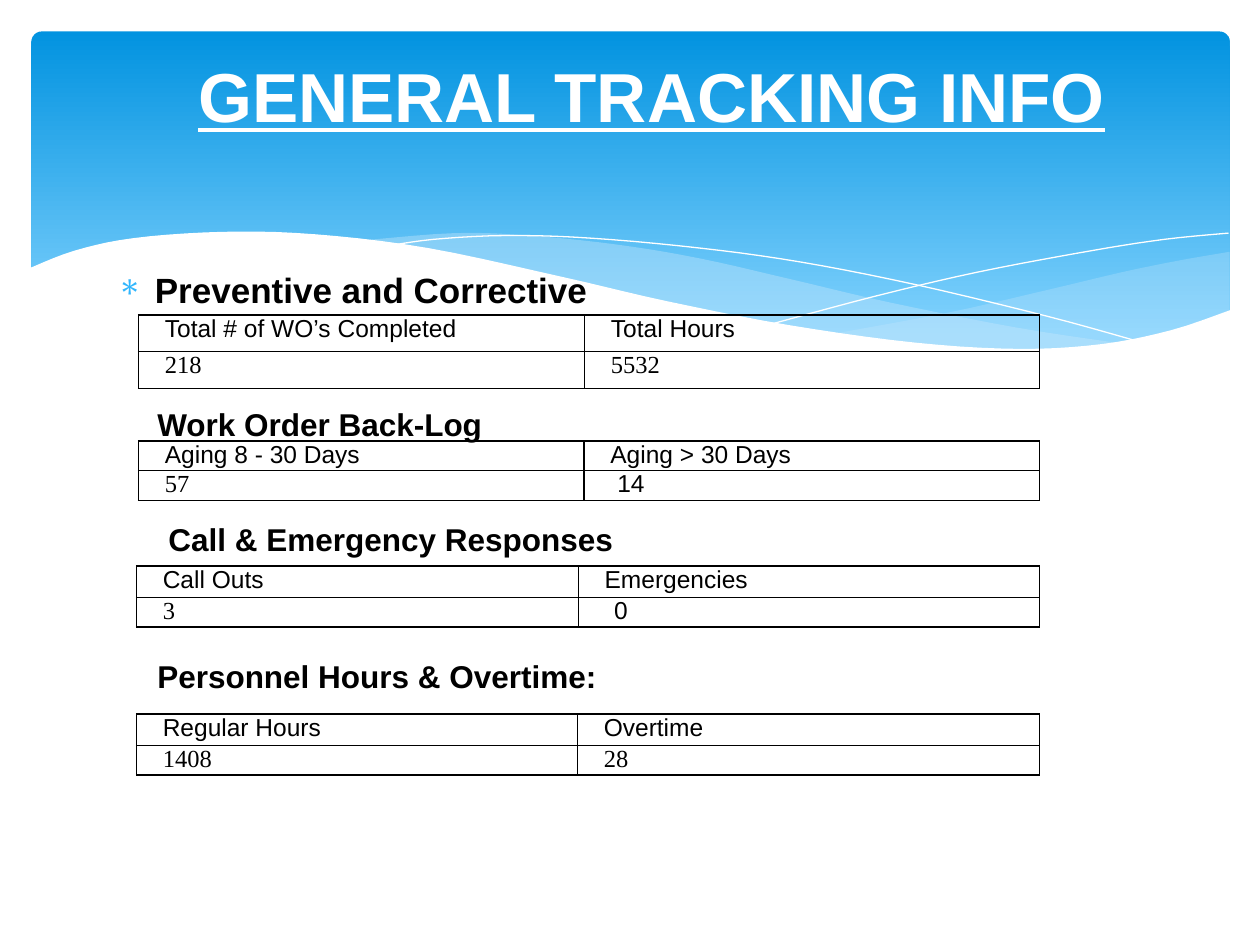
"""Build the general tracking info slide: a wave banner, four headings and four tables."""
import pptx
import pptx.util
import pptx.dml.color
import pptx.enum.shapes
import pptx.enum.text
import pptx.oxml
import pptx.oxml.ns
from lxml import etree

Pt = pptx.util.Pt
qn = pptx.oxml.ns.qn

COLORS = {"deep": "0293E0", "sky": "83D3FE", "mist": "C6E7FC",
          "white": "FFFFFF", "black": "000000", "bullet": "31B6FD"}
SANS, SERIF = "Arial", "Times New Roman"
TITLE = ("GENERAL TRACKING INFO", (36, 26.6, 648, 98.6))

WAVES = [
    {"fill": "mist", "alpha": 29, "curves": [
        [(702, 144), (673.2, 149), (641.5, 155.5), (599, 165.6), (542.2, 178.6), (475.9, 190.8)],
        [(475.9, 190.8), (497.5, 193.7), (536.4, 198), (578.2, 200), (614.9, 198.7),
         (645.8, 194.4), (673.2, 188.6), (702.7, 177.8)],
        [(702.7, 177.8), (702.7, 144)]]},
    {"fill": "mist", "alpha": 40, "curves": [
        [(643, 196.6), (581, 187.2), (508.3, 172.8), (452.9, 159.8), (399.6, 147.6),
         (352.1, 139.7), (302.4, 134.6), (259.9, 133.2), (205.9, 137.5)],
        [(205.9, 137.5), (246.2, 143.3), (290.9, 151.9), (353.5, 167), (420.5, 181.4),
         (478.8, 191.5), (529.9, 198), (573.1, 200.2), (610.6, 199.4), (643, 196.6)]]},
    {"line": "white", "curves": [
        [(222.5, 140.4), (247.7, 136.8), (288.7, 134.6), (337.7, 136.1), (400.3, 141.8),
         (457.9, 149.8), (523.4, 162.7), (598.3, 180.7), (653, 195.8)]]},
    {"line": "white", "curves": [
        [(441.4, 185), (500.4, 169.2), (558.7, 155.5), (623.5, 143.3), (665.3, 136.8),
         (702, 133.2)]]},
    {"fill": "white", "alpha": 100, "curves": [
        [(703.4, 177.1), (669.6, 188.6), (630, 196.6), (582.5, 199.4), (522.7, 195.8),
         (450.7, 185.8), (380.9, 172.1), (321.8, 158.4), (244.8, 141.8), (180, 133.9),
         (127.4, 132.5), (76.3, 136.1), (42.5, 143.3), (16.6, 153.4)],
        [(16.6, 153.4), (16.6, 236.9)], [(16.6, 236.9), (703.4, 236.9)]]},
]

HEADINGS = [
    {"text": "Preventive and Corrective", "at": (59.8, 149.8, 583.2, 35.3), "size": 20,
     "margin": 21.6, "bullet": "∗"},
    {"text": "Work Order Back-Log", "at": (82.8, 228.2, 202.3, 28.8), "size": 18, "margin": 0},
    {"text": "Call & Emergency Responses", "at": (79.2, 293.8, 280.8, 28.8), "size": 18,
     "margin": 10},
    {"text": "Personnel Hours & Overtime:", "at": (82.8, 372.2, 272.9, 28.8), "size": 18,
     "margin": 0},
]

TABLES = [
    {"at": (79.2, 180), "columns": (254.9, 260), "rows": (21, 21),
     "cells": [["Total # of WO’s Completed", "Total Hours"], ["218", "5532"]]},
    {"at": (79.2, 252), "columns": (254.6, 260.3), "rows": (17, 17),
     "cells": [["Aging 8 - 30 Days", "Aging > 30 Days"], ["57", "14"]],
     "last": (SANS, 14)},
    {"at": (78, 323.3), "columns": (252.5, 263.6), "rows": (18, 17),
     "cells": [["Call Outs", "Emergencies"], ["3", "0"]], "last": (SANS, 15.5)},
    {"at": (78, 408), "columns": (252, 264.1), "rows": (18, 17),
     "cells": [["Regular Hours", "Overtime"], ["1408", "28"]]},
]


def rgb(name):
    return pptx.dml.color.RGBColor.from_string(COLORS[name])


def apply(target, values):
    for name, value in values.items():
        setattr(target, name, value)


def write(frame, text, color, margin=0, para_format=None, **font):
    para = frame.paragraphs[0]
    apply(para, para_format or {})
    para._p.get_or_add_pPr().set("marL", str(Pt(margin)))
    span = para.add_run()
    span.text = text
    apply(span.font, font)
    span.font.color.rgb = rgb(color)
    return para


def smooth(points, steps=5):
    padded = [points[0], *points, points[-1]]
    for a, b, c, d in zip(padded, padded[1:], padded[2:], padded[3:]):
        for step in range(1, steps + 1):
            t = step / steps
            yield tuple(
                Pt((2 * q + (r - p) * t + (2 * p - 5 * q + 4 * r - s) * t ** 2
                    + (3 * q - p - 3 * r + s) * t ** 3) / 2)
                for p, q, r, s in zip(a, b, c, d))


def add_banner(page):
    banner = page.shapes.add_shape(pptx.enum.shapes.MSO_SHAPE.ROUNDED_RECTANGLE,
                                   *map(Pt, (18, 18, 684.7, 194.4)))
    banner.adjustments[0] = 0.03
    banner.shadow.inherit = False
    banner.line.fill.background()
    banner.fill.gradient()
    banner.fill.gradient_angle = 270
    for stop, position, color in zip(banner.fill.gradient_stops, (0, 0.9), ("deep", "sky")):
        stop.position = position
        stop.color.rgb = rgb(color)


def add_wave(page, wave):
    closed = "fill" in wave
    builder = page.shapes.build_freeform(*map(Pt, wave["curves"][0][0]), scale=1.0)
    for curve in wave["curves"]:
        builder.add_line_segments(list(smooth(curve)), close=False)
    if closed:
        builder.add_line_segments([], close=True)
    shape = builder.convert_to_shape()
    shape.shadow.inherit = False
    if closed:
        shape.line.fill.background()
        shape.fill.solid()
        shape.fill.fore_color.rgb = rgb(wave["fill"])
        paint = shape.element.spPr.find(".//" + qn("a:srgbClr"))
        etree.SubElement(paint, qn("a:alpha")).set("val", str(wave["alpha"] * 1000))
    else:
        shape.fill.background()
        shape.line.color.rgb = rgb(wave["line"])
        shape.line.width = Pt(0)


def add_heading(page, heading):
    box = page.shapes.add_textbox(*map(Pt, heading["at"]))
    box.text_frame.word_wrap = "bullet" in heading
    para = write(box.text_frame, heading["text"], "black", heading["margin"],
                 name=SANS, size=Pt(heading["size"]), bold=True)
    if "bullet" in heading:
        para.space_before = Pt(4)
        props = para._p.pPr
        props.set("indent", str(-Pt(heading["margin"])))
        color = etree.SubElement(props, qn("a:buClr"))
        etree.SubElement(color, qn("a:srgbClr")).set("val", COLORS["bullet"])
        etree.SubElement(props, qn("a:buChar")).set("char", heading["bullet"])


def format_cell(cell, text, font, margin):
    apply(cell, {"margin_left": Pt(5), "margin_right": Pt(5),
                 "margin_top": 0, "margin_bottom": 0})
    write(cell.text_frame, text, "black", margin, name=font, size=Pt(14))
    props = cell._tc.get_or_add_tcPr()
    for side in ("a:lnL", "a:lnR", "a:lnT", "a:lnB"):
        edge = etree.SubElement(props, qn(side), w=str(Pt(1)))
        paint = etree.SubElement(edge, qn("a:solidFill"))
        etree.SubElement(paint, qn("a:srgbClr")).set("val", COLORS["black"])
    cell.fill.background()


def add_grid(page, grid):
    size = sum(grid["columns"]), sum(grid["rows"])
    table = page.shapes.add_table(2, 2, *map(Pt, grid["at"] + size)).table
    apply(table, {"first_row": False, "horz_banding": False})
    for column, width in zip(table.columns, grid["columns"]):
        column.width = Pt(width)
    for r, height in enumerate(grid["rows"]):
        table.rows[r].height = Pt(height)
        for c, text in enumerate(grid["cells"][r]):
            style = (SERIF if r else SANS, 10)
            if r and c:
                style = grid.get("last", style)
            format_cell(table.cell(r, c), text, *style)


def add_title(page):
    text, place = TITLE
    title = page.shapes.title
    apply(title, dict(zip(("left", "top", "width", "height"), map(Pt, place))))
    apply(title.text_frame, {"vertical_anchor": pptx.enum.text.MSO_ANCHOR.TOP,
                             "auto_size": pptx.enum.text.MSO_AUTO_SIZE.NONE})
    write(title.text_frame, text, "white", 25,
          {"alignment": pptx.enum.text.PP_ALIGN.CENTER},
          name=SANS, size=Pt(39.6), bold=True, underline=True)
    title.element.getparent().append(title.element)


def main():
    deck = pptx.Presentation()
    apply(deck, {"slide_width": Pt(720), "slide_height": Pt(540)})
    page = deck.slides.add_slide(deck.slide_layouts[5])
    add_banner(page)
    for wave in WAVES:
        add_wave(page, wave)
    add_title(page)
    for heading, grid in zip(HEADINGS, TABLES):
        add_heading(page, heading)
        add_grid(page, grid)
    deck.save("out.pptx")


if __name__ == "__main__":
    main()
